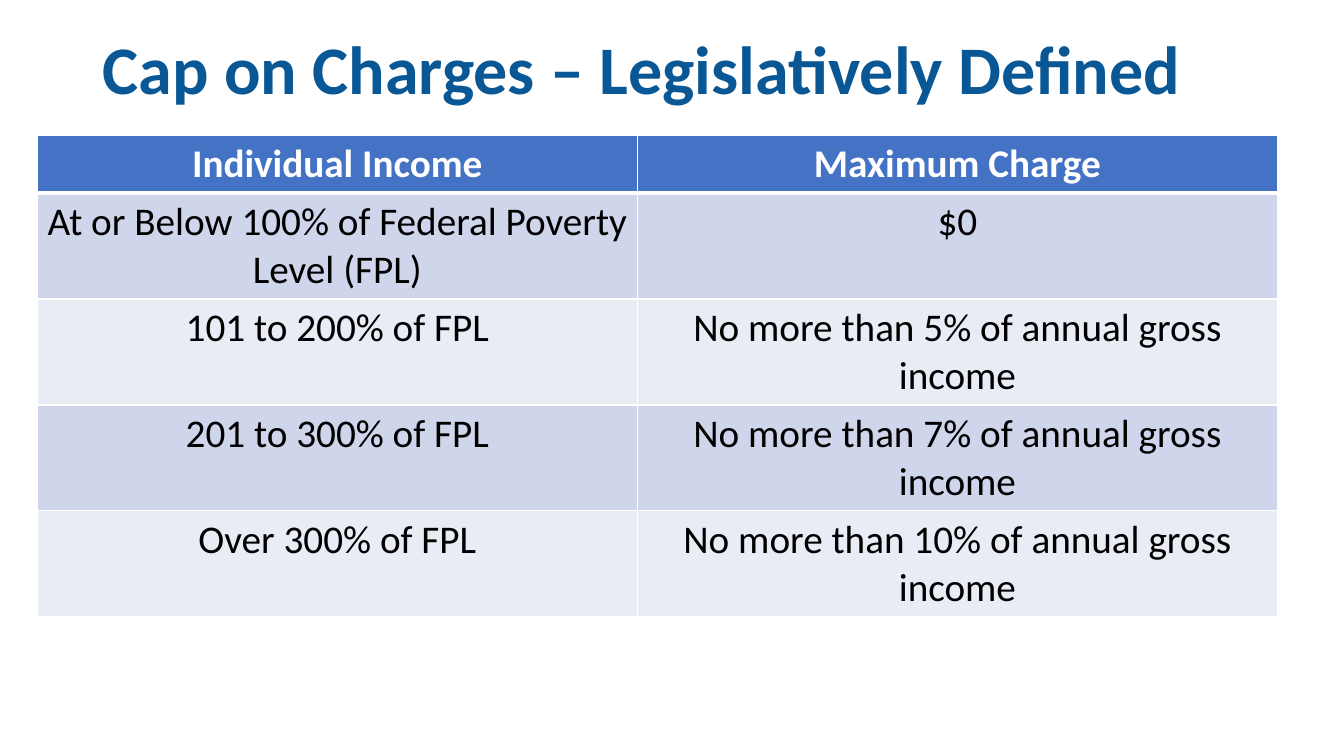
import pptx
import pptx.util
import pptx.dml.color
import pptx.enum.text
import pptx.oxml
import pptx.oxml.ns

Inch = pptx.util.Inches
Mid = pptx.enum.text.PP_ALIGN.CENTER
Left = pptx.enum.text.PP_ALIGN.LEFT
HUES = {"title": "095895", "head": "4472C4", "odd": "CFD5EA",
        "even": "E9EBF5", "white": "FFFFFF", "ink": "000000"}
ROWS = [
    ("Individual Income", "Maximum Charge"),
    ("At or Below 100% of Federal Poverty Level (FPL)", "$0"),
    ("101 to 200% of FPL", "No more than 5% of annual gross income"),
    ("201 to 300% of FPL", "No more than 7% of annual gross income"),
    ("Over 300% of FPL", "No more than 10% of annual gross income"),
]
COLS = [5.95, 6.35]
HEAD, BODY = 0.57, 1.05


def write(frame, text, size=28, hue="ink", bold=False, align=Mid, space=1.0):
    par = frame.paragraphs[0]
    par.alignment = align
    par.line_spacing = space
    run = par.add_run()
    run.text = text
    run.font.name = "Calibri"
    run.font.size = pptx.util.Pt(size)
    run.font.bold = bold
    run.font.color.rgb = pptx.dml.color.RGBColor.from_string(HUES[hue])


def edge(cell, side, width):
    cell._tc.get_or_add_tcPr().append(pptx.oxml.parse_xml(
        f'<a:{side} {pptx.oxml.ns.nsdecls("a")} w="{pptx.util.Pt(width)}">'
        f'<a:solidFill><a:srgbClr val="{HUES["white"]}"/></a:solidFill></a:{side}>'))


deck = pptx.Presentation()
deck.slide_width, deck.slide_height = Inch(13.33), Inch(7.5)
slide = deck.slides.add_slide(deck.slide_layouts[5])

title = slide.shapes.title
title.left, title.top, title.width, title.height = map(Inch, (0.92, 0.26, 11.5, 0.91))
title.text_frame.vertical_anchor = pptx.enum.text.MSO_ANCHOR.MIDDLE
title.text_frame.auto_size = pptx.enum.text.MSO_AUTO_SIZE.NONE
write(title.text_frame, "Cap on Charges – Legislatively Defined",
      size=48.6, hue="title", bold=True, align=Left, space=0.9)

high = HEAD + BODY * (len(ROWS) - 1)
grid = slide.shapes.add_table(len(ROWS), len(COLS), Inch(0.37), Inch(1.34),
                              Inch(sum(COLS)), Inch(high)).table
for col, wide in zip(grid.columns, COLS):
    col.width = Inch(wide)

for r, row in enumerate(ROWS):
    top = r == 0
    grid.rows[r].height = Inch(HEAD if top else BODY)
    fill = "head" if top else "odd" if r % 2 else "even"
    for c, text in enumerate(row):
        cell = grid.cell(r, c)
        for side in ("lnL", "lnR", "lnT", "lnB"):
            thick = (top and side == "lnB") or (r == 1 and side == "lnT")
            edge(cell, side, 3 if thick else 1)
        cell.fill.solid()
        cell.fill.fore_color.rgb = pptx.dml.color.RGBColor.from_string(HUES[fill])
        write(cell.text_frame, text, hue="white" if top else "ink", bold=top)

deck.save("out.pptx")
